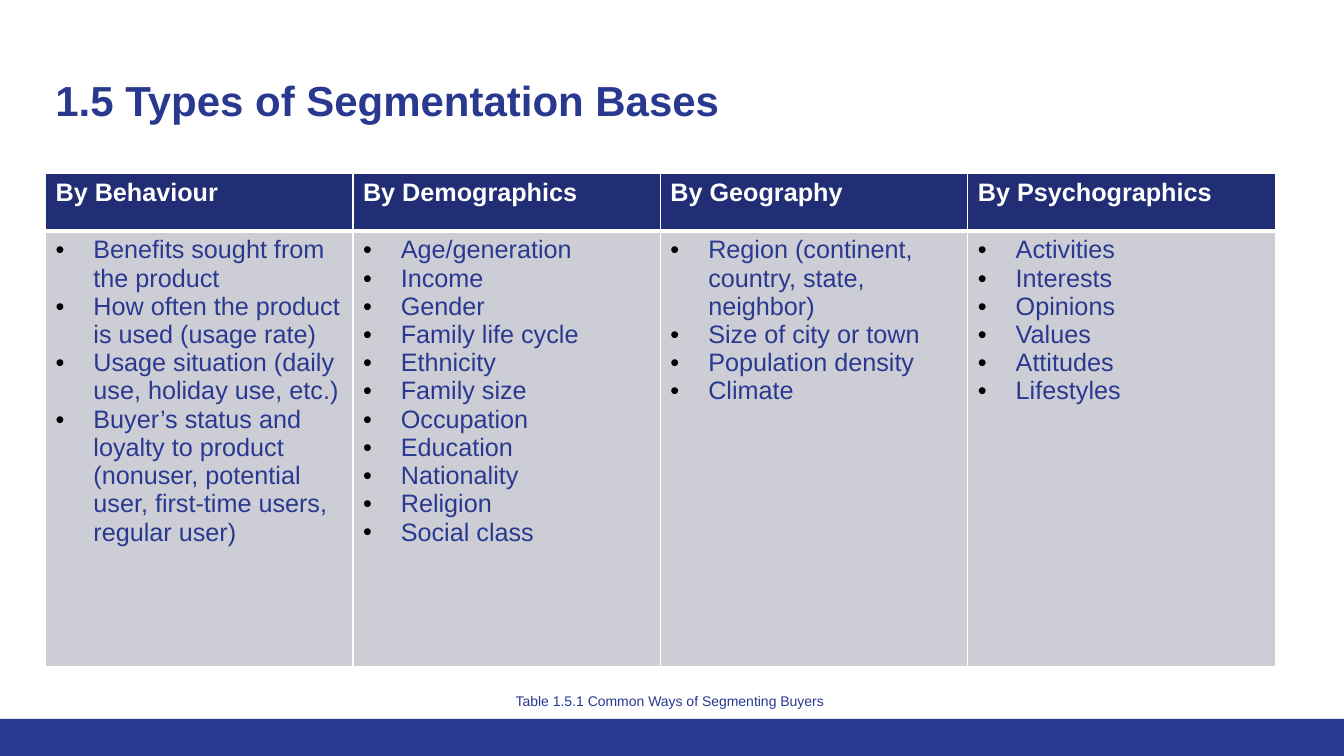
from lxml import etree
from pptx import Presentation
from pptx.dml.color import RGBColor
from pptx.enum import shapes, text
from pptx.oxml import ns
from pptx.util import Pt

BLUE = RGBColor(0x2A, 0x39, 0x90)
NAVY = RGBColor(0x21, 0x2D, 0x74)
GREY = RGBColor(0xCD, 0xCD, 0xD6)
WHITE = RGBColor(0xFF, 0xFF, 0xFF)
BLACK = RGBColor(0, 0, 0)
FONT = "Arial"
SLIDE_WIDTH, SLIDE_HEIGHT = 960, 540
BAND_HEIGHT = 26.5
BULLET_INDENT = 27

SEGMENTATION_BASES = {
    "By Behaviour": [
        "Benefits sought from the product",
        "How often the product is used (usage rate)",
        "Usage situation (daily use, holiday use, etc.)",
        "Buyer’s status and loyalty to product (nonuser, potential user, "
        "first-time users, regular user)",
    ],
    "By Demographics": [
        "Age/generation", "Income", "Gender", "Family life cycle", "Ethnicity",
        "Family size", "Occupation", "Education", "Nationality", "Religion",
        "Social class",
    ],
    "By Geography": [
        "Region (continent, country, state, neighbor)",
        "Size of city or town", "Population density", "Climate",
    ],
    "By Psychographics": [
        "Activities", "Interests", "Opinions", "Values", "Attitudes", "Lifestyles",
    ],
}


def format_runs(text_frame, size, color, bold=False):
    for paragraph in text_frame.paragraphs:
        for run in paragraph.runs:
            run.font.name = FONT
            run.font.size = Pt(size)
            run.font.bold = bold
            run.font.color.rgb = color


def add_solid_fill(parent, color):
    fill = etree.SubElement(parent, ns.qn("a:solidFill"))
    etree.SubElement(fill, ns.qn("a:srgbClr"), val=str(color))


def add_bullet(paragraph):
    properties = paragraph._p.get_or_add_pPr()
    properties.set("marL", str(Pt(BULLET_INDENT)))
    properties.set("indent", str(-Pt(BULLET_INDENT)))
    color = etree.SubElement(properties, ns.qn("a:buClr"))
    etree.SubElement(color, ns.qn("a:srgbClr"), val=str(BLACK))
    etree.SubElement(properties, ns.qn("a:buFont"), typeface=FONT)
    etree.SubElement(properties, ns.qn("a:buChar"), char="•")


def style_cell(cell, fill_color, top_width, bottom_width):
    """Draw white borders (widths in points) and fill the cell."""
    properties = cell._tc.get_or_add_tcPr()
    widths = {"a:lnL": 1, "a:lnR": 1, "a:lnT": top_width, "a:lnB": bottom_width}
    for tag, width in widths.items():
        border = etree.SubElement(properties, ns.qn(tag), w=str(Pt(width)))
        add_solid_fill(border, WHITE)
    cell.fill.solid()
    cell.fill.fore_color.rgb = fill_color


def add_text(slide, box, content, size, bold=False, wrap=True):
    shape = slide.shapes.add_textbox(*map(Pt, box))
    text_frame = shape.text_frame
    text_frame.word_wrap = wrap
    text_frame.text = content
    format_runs(text_frame, size, BLUE, bold)
    return text_frame


def add_title(slide, box):
    text_frame = add_text(slide, box, "1.5 Types of Segmentation Bases", 30, bold=True)
    text_frame.vertical_anchor = text.MSO_ANCHOR.TOP
    text_frame.margin_top = Pt(10)


def add_bases_table(slide, box, header_height):
    left, top, width, height = box
    count = len(SEGMENTATION_BASES)
    table = slide.shapes.add_table(2, count, *map(Pt, box)).table
    table.rows[0].height = Pt(header_height)
    table.rows[1].height = Pt(height - header_height)
    for index, (heading, items) in enumerate(SEGMENTATION_BASES.items()):
        table.columns[index].width = Pt(width / count)

        header = table.cell(0, index)
        header.text_frame.text = heading
        format_runs(header.text_frame, 18, WHITE, bold=True)
        style_cell(header, NAVY, 1, 3)

        body = table.cell(1, index)
        body.text_frame.text = "\n".join(items)
        for paragraph in body.text_frame.paragraphs:
            add_bullet(paragraph)
        format_runs(body.text_frame, 18, BLUE)
        style_cell(body, GREY, 3, 1)


def add_footer_band(slide, box):
    band = slide.shapes.add_shape(shapes.MSO_SHAPE.RECTANGLE, *map(Pt, box))
    band.shadow.inherit = False
    band.fill.solid()
    band.fill.fore_color.rgb = BLUE
    band.line.fill.background()


def main():
    presentation = Presentation()
    presentation.slide_width = Pt(SLIDE_WIDTH)
    presentation.slide_height = Pt(SLIDE_HEIGHT)
    slide = presentation.slides.add_slide(presentation.slide_layouts[6])
    add_footer_band(slide, (0, SLIDE_HEIGHT - BAND_HEIGHT, SLIDE_WIDTH, BAND_HEIGHT))
    add_title(slide, (32.5, 43, 894, 64))
    add_bases_table(slide, (32.5, 124, 878.4, 352.5), 41)
    add_text(slide, (361.25, 491, 237.5, 19.5),
             "Table 1.5.1\u00a0Common Ways of Segmenting Buyers", 10, wrap=False)
    presentation.save("out.pptx")


if __name__ == "__main__":
    main()
